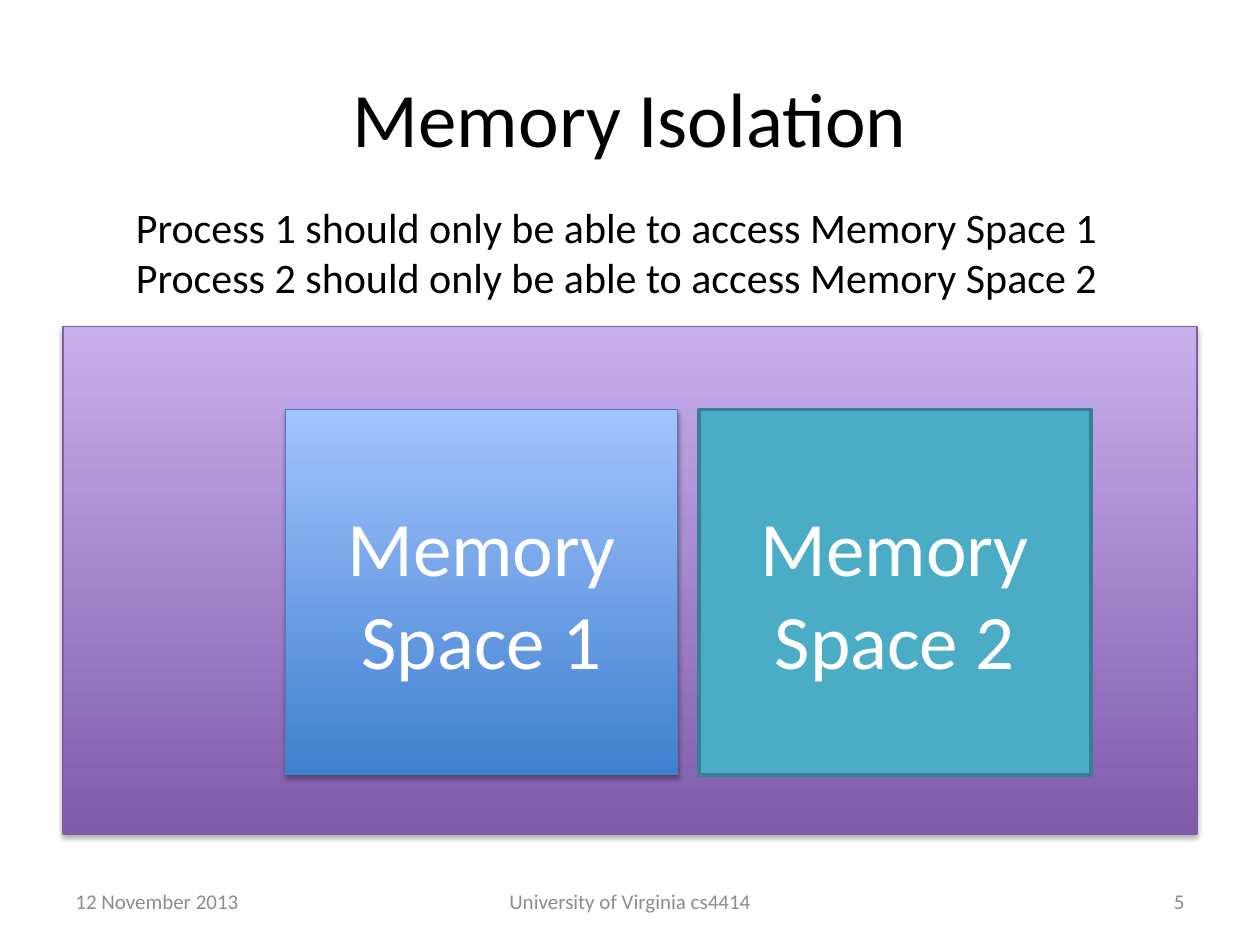
from lxml import etree
from pptx import Presentation
from pptx.dml.color import RGBColor
from pptx.enum.shapes import MSO_SHAPE
from pptx.enum.text import MSO_ANCHOR, MSO_AUTO_SIZE, PP_ALIGN
from pptx.oxml.ns import qn
from pptx.util import Pt

RECTANGLE = MSO_SHAPE.RECTANGLE
MIDDLE = MSO_ANCHOR.MIDDLE
TOP = MSO_ANCHOR.TOP
FIT_SHAPE = MSO_AUTO_SIZE.SHAPE_TO_FIT_TEXT
LEFT, CENTER, RIGHT = PP_ALIGN.LEFT, PP_ALIGN.CENTER, PP_ALIGN.RIGHT

FONT = "Calibri"
SPACE_TOP, SPACE_WIDTH, SPACE_HEIGHT = 234, 223.92, 208.8
FOOTER_TOP, FOOTER_HEIGHT = 500.4, 28.8


def color(hex_string):
    return RGBColor.from_string(hex_string)


def write(frame, lines, size, hex_color, align, anchor=MIDDLE):
    frame.text = "\n".join(lines)
    frame.vertical_anchor = anchor
    for paragraph in frame.paragraphs:
        paragraph.alignment = align
        paragraph.font.name = FONT
        paragraph.font.size = Pt(size)
        paragraph.font.color.rgb = color(hex_color)


def add_title(slide, text):
    title = slide.shapes.title
    title.left, title.top, title.width, title.height = Pt(36), Pt(21.6), Pt(648), Pt(90)
    write(title.text_frame, [text], 44, "000000", CENTER)


def add_label(slide, box, lines, size, hex_color, align, anchor=MIDDLE, wrap=True):
    label = slide.shapes.add_textbox(*map(Pt, box))
    write(label.text_frame, lines, size, hex_color, align, anchor)
    label.text_frame.word_wrap = wrap
    return label


def add_block(slide, box, fills, line_color, line_width, text=None):
    block = slide.shapes.add_shape(RECTANGLE, *map(Pt, box))
    block.shadow.inherit = False
    if len(fills) == 1:
        block.fill.solid()
        block.fill.fore_color.rgb = color(fills[0])
    else:
        block.fill.gradient()
        block.fill.gradient_angle = 90
        for stop, shade in zip(block.fill.gradient_stops, fills):
            stop.color.rgb = color(shade)
    block.line.color.rgb = color(line_color)
    block.line.width = Pt(line_width)
    if text:
        write(block.text_frame, [text], 44, "FFFFFF", CENTER)
    return block


def add_shadow(block):
    effects = block._element.spPr.find(qn("a:effectLst"))
    shadow = etree.SubElement(
        effects, qn("a:outerShdw"), blurRad=str(Pt(3.1)), dist=str(Pt(1.8)),
        dir="5400000", rotWithShape="0")
    shade = etree.SubElement(shadow, qn("a:srgbClr"), val="000000")
    etree.SubElement(shade, qn("a:alpha"), val="35000")


def main():
    deck = Presentation()
    deck.slide_width, deck.slide_height = Pt(720), Pt(540)
    slide = deck.slides.add_slide(deck.slide_layouts[5])

    memory = add_block(slide, (36, 186.48, 648, 290.16), ["7F5BAB", "C8B0ED"], "7D60A0", 0.75)
    add_shadow(memory)
    add_title(slide, "Memory Isolation")

    for left, width, text, align in (
        (36, 168, "12 November 2013", LEFT),
        (246, 228, "University of Virginia cs4414", CENTER),
        (516, 168, "5", RIGHT),
    ):
        add_label(slide, (left, FOOTER_TOP, width, FOOTER_HEIGHT), [text], 12, "8C8C8C", align)

    first_space = add_block(
        slide, (163.2, SPACE_TOP, SPACE_WIDTH, SPACE_HEIGHT),
        ["3F80CE", "A4C4FF"], "4B7EBC", 0.75, "Memory Space 1")
    add_shadow(first_space)
    add_block(
        slide, (399.4, SPACE_TOP, SPACE_WIDTH, SPACE_HEIGHT),
        ["4BACC6"], "377F92", 2, "Memory Space 2")

    rules = [f"Process {n} should only be able to access Memory Space {n}" for n in (1, 2)]
    rules_label = add_label(
        slide, (70.56, 111.6, 569.52, 65.52), rules, 24, "000000", LEFT, TOP, False)
    rules_label.text_frame.auto_size = FIT_SHAPE

    deck.save("out.pptx")


if __name__ == "__main__":
    main()
